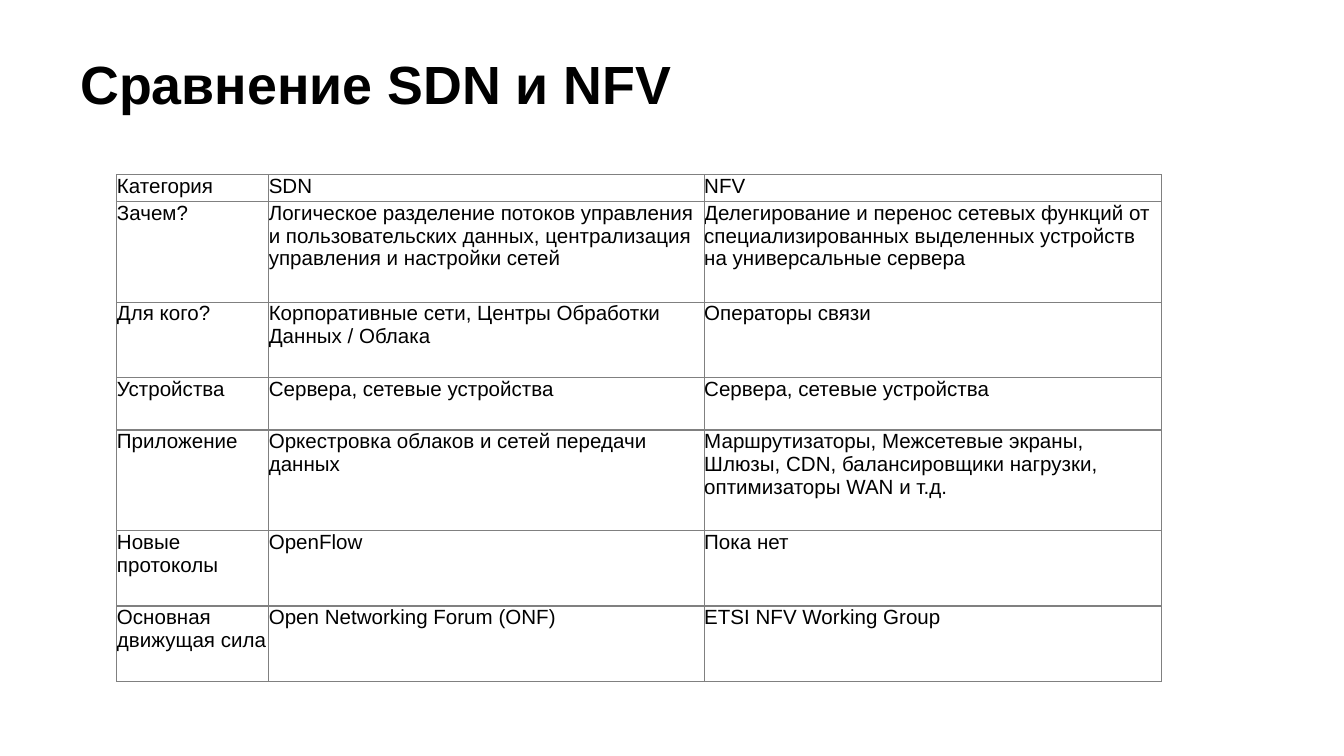
from lxml.etree import SubElement as Sub
from pptx import Presentation
from pptx.dml.color import RGBColor as RGB
from pptx.enum.text import MSO_ANCHOR as Anchor
from pptx.oxml.ns import qn
from pptx.util import Inches, Pt

BLACK = RGB(0, 0, 0)
WHITE = RGB(255, 255, 255)
GRAY = RGB(128, 128, 128)
FONT = "Arial"

COLS = [1.13, 3.24, 3.4]
ROWS = [
    (0.2, "Категория", "SDN", "NFV"),
    (0.75, "Зачем?",
     "Логическое разделение потоков управления и пользовательских данных, "
     "централизация управления и настройки сетей",
     "Делегирование и перенос сетевых функций от специализированных "
     "выделенных устройств на универсальные сервера"),
    (0.56, "Для кого?",
     "Корпоративные сети, Центры Обработки Данных / Облака",
     "Операторы связи"),
    (0.39, "Устройства",
     "Сервера, сетевые устройства", "Сервера, сетевые устройства"),
    (0.75, "Приложение",
     "Оркестровка облаков и сетей передачи данных",
     "Маршрутизаторы, Межсетевые экраны, Шлюзы, CDN, "
     "балансировщики нагрузки, оптимизаторы WAN и т.д."),
    (0.56, "Новые протоколы", "OpenFlow", "Пока нет"),
    (0.56, "Основная движущая сила",
     "Open Networking Forum (ONF)", "ETSI NFV Working Group"),
]


def style(par, size, bold=False):
    for run in par.runs:
        font = run.font
        font.name, font.size, font.bold = FONT, Pt(size), bold
        font.color.rgb = BLACK


def add_title(slide, x, y, w, h, text):
    frame = slide.shapes.add_textbox(
        Inches(x), Inches(y), Inches(w), Inches(h)).text_frame
    frame.word_wrap = True
    frame.vertical_anchor = Anchor.MIDDLE
    frame.text = text
    style(frame.paragraphs[0], 28.8, True)


def add_edges(cell):
    # Border lines must come before the fill in the cell properties
    props = cell._tc.get_or_add_tcPr()
    for side in ("a:lnL", "a:lnR", "a:lnT", "a:lnB"):
        line = Sub(props, qn(side), w=str(Pt(0.67)))
        fill = Sub(line, qn("a:solidFill"))
        Sub(fill, qn("a:srgbClr"), val=str(GRAY))


def fill_cell(cell, text):
    add_edges(cell)
    cell.fill.solid()
    cell.fill.fore_color.rgb = WHITE
    cell.margin_left = cell.margin_right = 0
    cell.margin_top = cell.margin_bottom = 0
    cell.text_frame.text = text
    style(cell.text_frame.paragraphs[0], 11)


def add_grid(slide, x, y):
    high = sum(row[0] for row in ROWS)
    table = slide.shapes.add_table(
        len(ROWS), len(COLS), Inches(x), Inches(y),
        Inches(sum(COLS)), Inches(high)).table
    table.first_row = table.horz_banding = False
    for col, wide in zip(table.columns, COLS):
        col.width = Inches(wide)
    for row, (tall, *texts) in zip(table.rows, ROWS):
        row.height = Inches(tall)
        for cell, text in zip(row.cells, texts):
            fill_cell(cell, text)


def main():
    deck = Presentation()
    # Widescreen, 16 to 9
    deck.slide_width = Inches(10)
    deck.slide_height = deck.slide_width * 9 // 16
    slide = deck.slides.add_slide(deck.slide_layouts[6])
    # Heading
    add_title(slide, 0.5, 0.33, 7.46, 0.58, "Сравнение SDN и NFV")
    # Comparison table
    add_grid(slide, 0.87, 1.3)
    deck.save("out.pptx")


if __name__ == "__main__":
    main()
